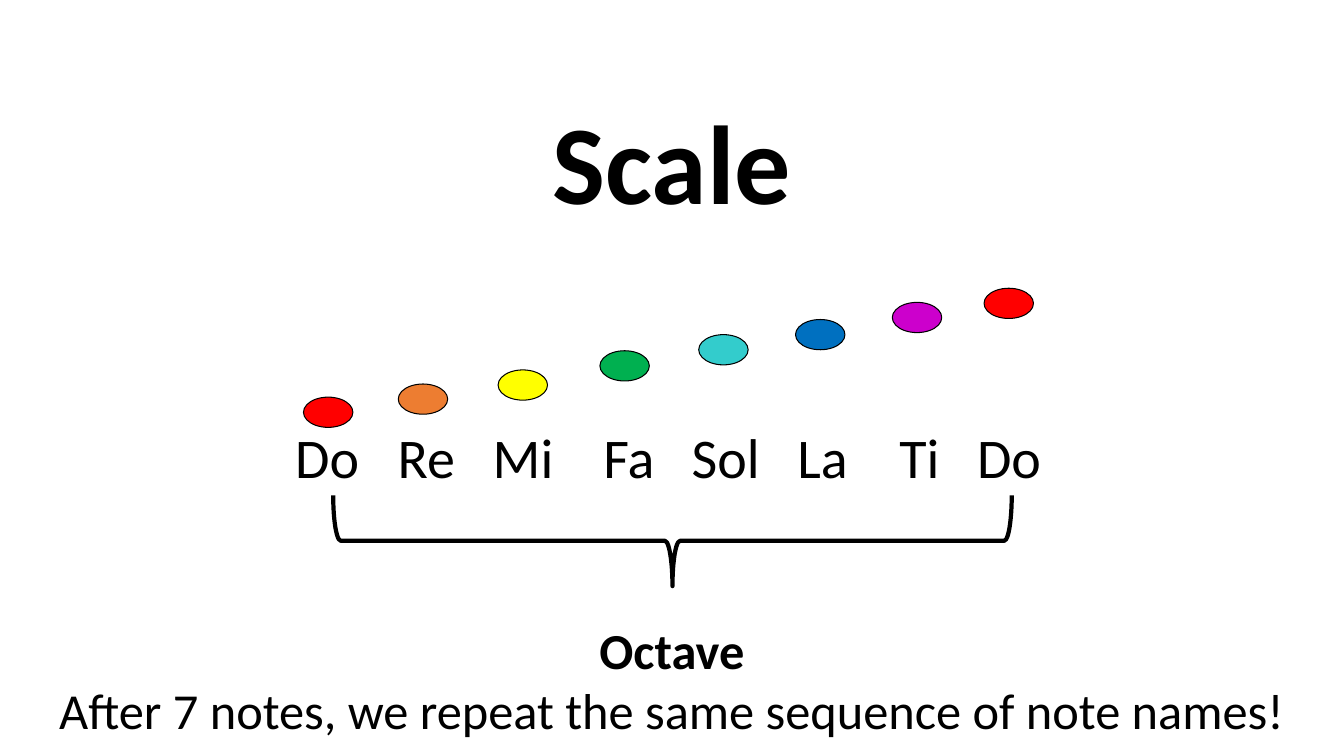
"""Build the slide on the solfege scale and its octave."""
from lxml.etree import SubElement
from pptx import Presentation
from pptx.dml.color import RGBColor as RGB
from pptx.enum.shapes import MSO_SHAPE as Kind
from pptx.enum.text import MSO_AUTO_SIZE as Fit, PP_ALIGN as Align
from pptx.oxml.ns import qn
from pptx.util import Inches as In, Pt

HUES = {"ink": "000000", "red": "FF0000", "orange": "ED7D31", "yellow": "FFFF00",
        "green": "00B050", "teal": "33CCCC", "blue": "0070C0", "purple": "CC00CC"}
WIDE, HIGH = 13.33, 7.5
OVAL = (0.49, 0.3)
NOTES = [
    ("Do", "red", 3.01, 3.94, 3.24),
    ("Re", "orange", 3.95, 3.81, 4.23),
    ("Mi", "yellow", 4.94, 3.67, 5.19),
    ("Fa", "green", 5.95, 3.48, 6.24),
    ("Sol", "teal", 6.93, 3.32, 7.2),
    ("La", "blue", 7.89, 3.17, 8.16),
    ("Ti", "purple", 8.85, 3, 9.12),
    ("Do", "red", 9.76, 2.86, 10.01),
]
NAMES = (2.83, 4.14, 7.67, 0.77)
TITLE = (5.37, 0.87, 2.59, 1.45)
FOOT = (0, 6.09, WIDE, 1.31)
BRACE = (6.22, 2, 0.9, 6.73)
INSET = 0.1


def style(run, size, bold=False):
    form = {"name": "Calibri", "size": Pt(size), "bold": bold}
    for key, val in form.items():
        setattr(run.font, key, val)
    run.font.color.rgb = RGB.from_string(HUES["ink"])


def write(host, box, runs, align=Align.CENTER, wrap=True, tabs=()):
    frame = host.add_textbox(*map(In, box)).text_frame
    frame.word_wrap, frame.auto_size = wrap, Fit.SHAPE_TO_FIT_TEXT
    para = frame.paragraphs[0]
    para.alignment = align
    if tabs:
        stops = SubElement(para._p.get_or_add_pPr(), qn("a:tabLst"))
        for pos in tabs:
            SubElement(stops, qn("a:tab"), pos=str(In(pos)), algn="ctr")
    for i, (text, size, bold) in enumerate(runs):
        if i:
            para.add_line_break()
        run = para.add_run()
        run.text = text
        style(run, size, bold)


def draw(host, kind, box, width, fill=None):
    shape = host.add_shape(kind, *map(In, box))
    shape.shadow.inherit = False
    if fill:
        shape.fill.solid()
        shape.fill.fore_color.rgb = RGB.from_string(HUES[fill])
    else:
        shape.fill.background()
    shape.line.color.rgb = RGB.from_string(HUES["ink"])
    shape.line.width = Pt(width)
    return shape


def main():
    deck = Presentation()
    deck.slide_width, deck.slide_height = In(WIDE), In(HIGH)
    shapes = deck.slides.add_slide(deck.slide_layouts[6]).shapes

    scale = shapes.add_group_shape().shapes
    for _, hue, left, top, _ in NOTES:
        draw(scale, Kind.OVAL, (left, top, *OVAL), 0.75, hue)
    tabs = [note[4] - NAMES[0] - INSET for note in NOTES[1:]]
    names = "\t".join(note[0] for note in NOTES)
    write(scale, NAMES, [(names, 40, False)], Align.LEFT, tabs=tabs)

    write(shapes, TITLE, [("Scale", 80, True)], wrap=False)
    draw(shapes, Kind.LEFT_BRACE, BRACE, 3).rotation = 270
    write(shapes, FOOT, [
        ("Octave", 36, True),
        ("After 7 notes, we repeat the same sequence of note names!", 36, False),
    ])
    deck.save("out.pptx")


if __name__ == "__main__":
    main()
